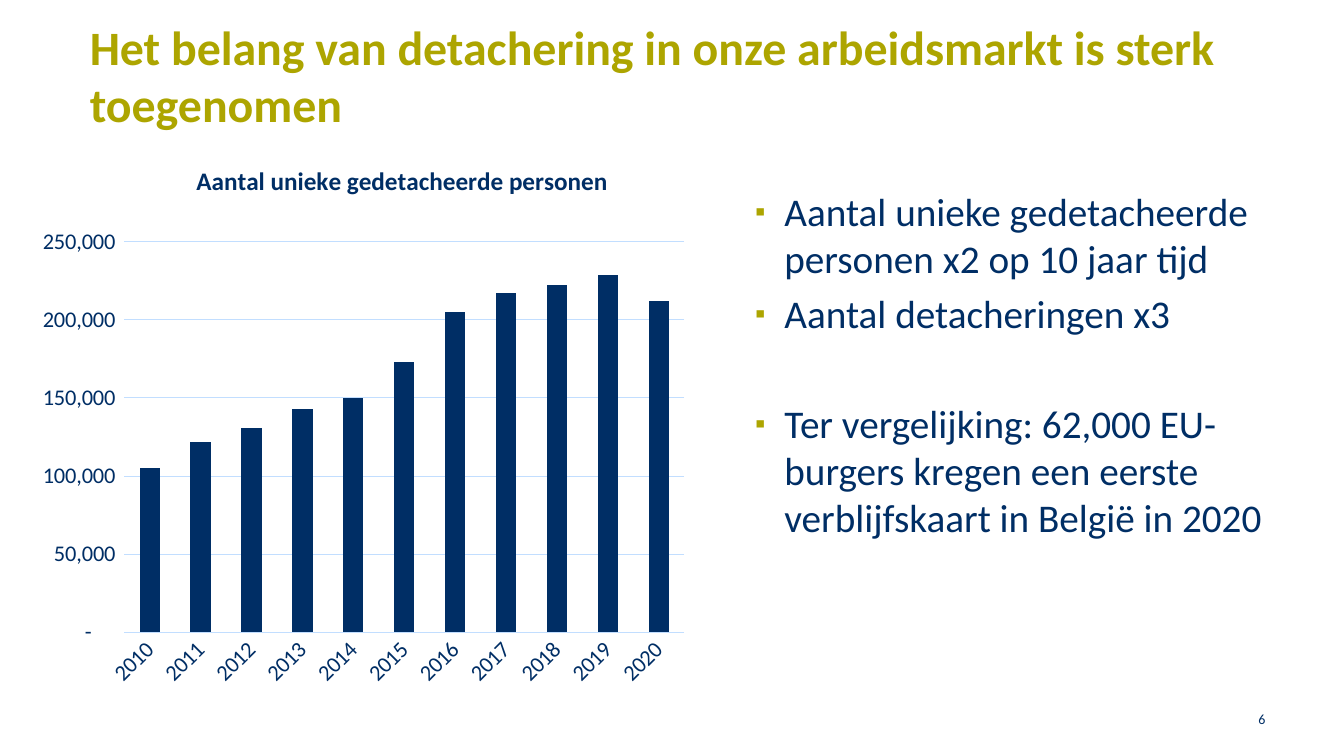
from lxml import etree
from pptx import Presentation
from pptx.chart.data import CategoryChartData
from pptx.dml.color import RGBColor
from pptx.enum.chart import XL_CHART_TYPE, XL_TICK_MARK
from pptx.enum.text import MSO_ANCHOR, MSO_AUTO_SIZE, PP_ALIGN
from pptx.oxml.ns import qn
from pptx.util import Inches, Pt

NAVY = RGBColor(0x00, 0x2E, 0x65)
OLIVE = RGBColor(0xAD, 0xA5, 0x00)
PALE_BLUE = RGBColor(0xC2, 0xDE, 0xFF)


def set_font(font, size, color=NAVY, bold=False):
    for name, value in {"name": "Calibri", "size": Pt(size), "bold": bold}.items():
        setattr(font, name, value)
    font.color.rgb = color


def set_layout(parent, index, **fractions):
    for old in parent.findall(qn("c:layout")):
        parent.remove(old)
    layout = etree.Element(qn("c:layout"))
    parent.insert(index, layout)
    manual = etree.SubElement(layout, qn("c:manualLayout"))
    if "w" in fractions:
        etree.SubElement(manual, qn("c:layoutTarget"), val="inner")
    for axis in "xy":
        etree.SubElement(manual, qn(f"c:{axis}Mode"), val="edge")
    for key, value in fractions.items():
        etree.SubElement(manual, qn(f"c:{key}"), val=str(value))


prs = Presentation()
prs.slide_width, prs.slide_height = Inches(13.33), Inches(7.5)
slide = prs.slides.add_slide(prs.slide_layouts[5])

# Title
heading = slide.shapes.title
heading.left, heading.top = Inches(0.89), Inches(0.17)
heading.width, heading.height = Inches(11.76), Inches(0.83)
heading.text_frame.text = "Het belang van detachering in onze arbeidsmarkt is sterk toegenomen"
heading.text_frame.paragraphs[0].alignment = PP_ALIGN.LEFT
set_font(heading.text_frame.paragraphs[0].runs[0].font, 34.2, OLIVE, True)

# Key messages, with the space before each in points
messages = [
    ("Aantal unieke gedetacheerde personen x2 op 10 jaar tijd", 0),
    ("Aantal detacheringen x3", 5.6),
    ("Ter vergelijking: 62,000 EU-burgers kregen een eerste verblijfskaart in België in 2020", 45),
]
message_box = slide.shapes.add_textbox(Inches(7.49), Inches(1.86), Inches(5.34), Inches(4.73))
for number, (message, gap) in enumerate(messages):
    frame = message_box.text_frame
    paragraph = frame.paragraphs[0] if number == 0 else frame.add_paragraph()
    paragraph.text = message
    paragraph.space_before = Pt(gap)
    bullet = paragraph._p.get_or_add_pPr()
    bullet.set("marL", str(Inches(0.29)))
    bullet.set("indent", str(-Inches(0.29)))
    bullet_color = etree.SubElement(bullet, qn("a:buClr"))
    etree.SubElement(bullet_color, qn("a:srgbClr"), val=str(OLIVE))
    etree.SubElement(bullet, qn("a:buSzPct"), val="75000")
    etree.SubElement(bullet, qn("a:buFont"), typeface="Arial")
    etree.SubElement(bullet, qn("a:buChar"), char="▪")
    set_font(paragraph.runs[0].font, 28)

for frame in (heading.text_frame, message_box.text_frame):
    frame.word_wrap = True
    frame.auto_size = MSO_AUTO_SIZE.NONE
    frame.vertical_anchor = MSO_ANCHOR.TOP
    for side in ("left", "top", "right", "bottom"):
        setattr(frame, f"margin_{side}", 0)

# Chart of posted workers per year
posted = CategoryChartData()
posted.categories = [str(year) for year in range(2010, 2021)]
posted.add_series("Aantal unieke gedetacheerde personen", [
    105000, 122000, 131000, 143000, 150000, 173000,
    205000, 217000, 222000, 229000, 212000])
chart = slide.shapes.add_chart(XL_CHART_TYPE.COLUMN_CLUSTERED, Inches(0.23), Inches(1.47),
                               Inches(6.69), Inches(5.46), posted).chart
set_font(chart.font, 16)
chart.has_legend = False
chart.has_title = True
chart_heading = chart.chart_title.text_frame
chart_heading.text = "Aantal unieke gedetacheerde personen"
set_font(chart_heading.paragraphs[0].runs[0].font, 18, bold=True)
set_layout(chart.chart_title._element, 1, x=0.25, y=0.02)
set_layout(chart.plots[0]._element.getparent(), 0, x=0.15, y=0.17, w=0.83, h=0.71)

columns = chart.plots[0]
columns.gap_width = 150
columns.vary_by_categories = False
columns.series[0].format.fill.solid()
columns.series[0].format.fill.fore_color.rgb = NAVY

# Axes
years, persons = chart.category_axis, chart.value_axis
for axis in (years, persons):
    axis.major_tick_mark = axis.minor_tick_mark = XL_TICK_MARK.NONE
    set_font(axis.tick_labels.font, 16)
years._element.find(qn("c:txPr")).find(qn("a:bodyPr")).set("rot", "-2700000")
persons.minimum_scale, persons.maximum_scale, persons.major_unit = 0, 250000, 50000
persons.has_major_gridlines = True
persons.tick_labels.number_format = '_-* #,##0_-;\\-* #,##0_-;_-* "-"??_-;_-@_'
persons.tick_labels.number_format_is_linked = False
for line in (years.format.line, persons.major_gridlines.format.line):
    line.color.rgb = PALE_BLUE
    line.width = Pt(0.75)
persons.format.line.fill.background()

# Slide number
page_box = slide.shapes.add_textbox(Inches(9.76), Inches(6.93), Inches(2.89), Inches(0.4))
page_box.text_frame.word_wrap = True
page_box.text_frame.vertical_anchor = MSO_ANCHOR.MIDDLE
page = page_box.text_frame.paragraphs[0]
page.text = "6"
page.alignment = PP_ALIGN.RIGHT
set_font(page.runs[0].font, 10)

prs.save("out.pptx")
